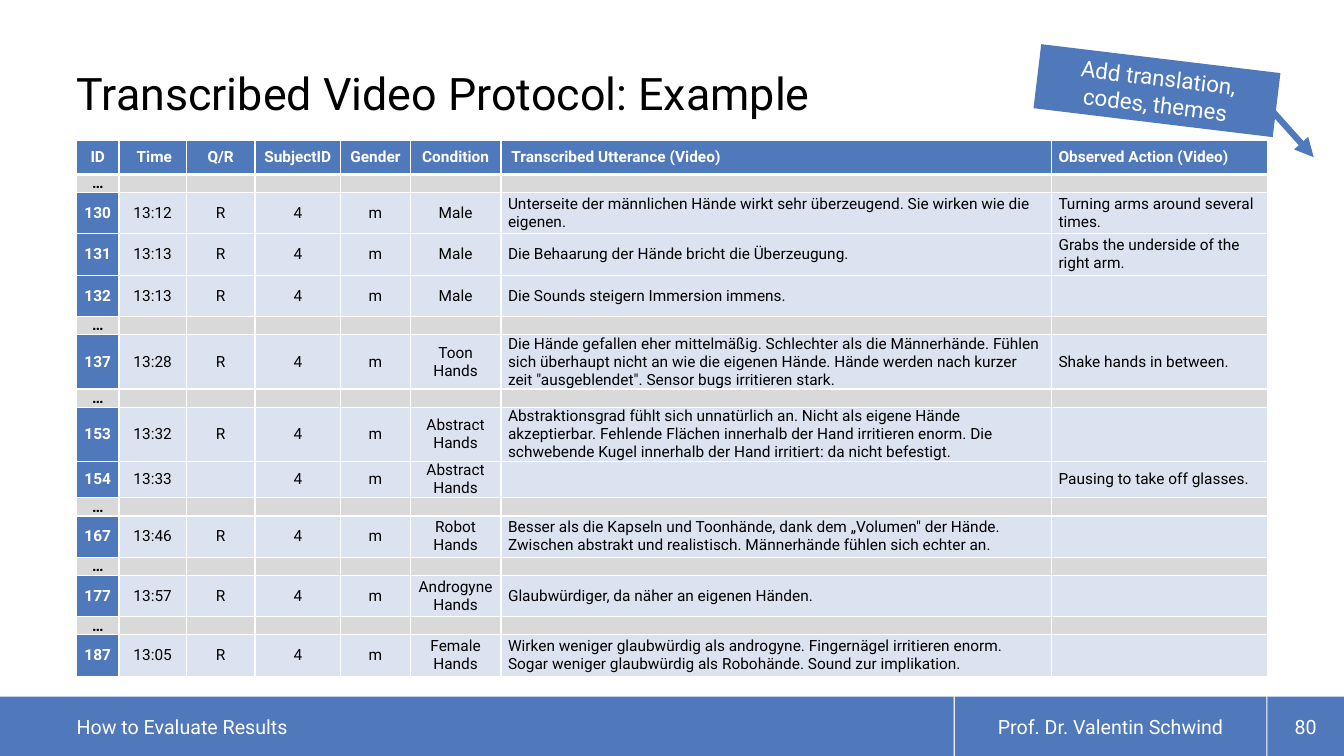
"""Builds the slide with an example of a transcribed video protocol."""
import lxml.etree
import pptx
import pptx.dml.color
import pptx.enum.shapes
import pptx.enum.text
import pptx.oxml.ns
import pptx.util

EMU_PER_PX = 9144
FONT = "Roboto"
COLORS = {"blue": "5079BC", "pale": "DBE3F1", "gray": "D9D9D9", "white": "FFFFFF", "black": "000000"}
ALIGN = pptx.enum.text.PP_ALIGN
MIDDLE = pptx.enum.text.MSO_ANCHOR.MIDDLE
BOTTOM = pptx.enum.text.MSO_ANCHOR.BOTTOM
RECTANGLE = pptx.enum.shapes.MSO_SHAPE.RECTANGLE

COLUMN_WIDTHS = [42, 67, 68, 85, 69, 90, 546, 214]
CENTERED_COLUMNS = 6
HEADER_HEIGHT = 34
GAP_HEIGHT = 18
HEADER = ["ID", " Time", "Q/R", "SubjectID", "Gender", "Condition",
          " Transcribed Utterance (Video)", "Observed Action (Video)"]
GAP = (GAP_HEIGHT, ["…"] + [""] * 7)


def entry(height, number, time, condition, utterance, action="", kind="R"):
    """Return the height and cell texts of one protocol entry."""
    return height, [number, time, kind, "4", "m", condition, utterance, action]


ROWS = [
    GAP,
    entry(41, "130", "13:12", "Male",
          "Unterseite der männlichen Hände wirkt sehr überzeugend. Sie wirken wie die eigenen.",
          "Turning arms around several times."),
    entry(41, "131", "13:13", "Male", "Die Behaarung der Hände bricht die Überzeugung.",
          "Grabs the underside of the right arm."),
    entry(41, "132", "13:13", "Male", "Die Sounds steigern Immersion immens."),
    GAP,
    entry(54, "137", "13:28", "Toon Hands",
          "Die Hände gefallen eher mittelmäßig. Schlechter als die Männerhände. Fühlen sich "
          "überhaupt nicht an wie die eigenen Hände. Hände werden nach kurzer zeit "
          '"ausgeblendet". Sensor bugs irritieren stark.',
          "Shake hands in between."),
    GAP,
    entry(54, "153", "13:32", "Abstract Hands",
          "Abstraktionsgrad fühlt sich unnatürlich an. Nicht als eigene Hände akzeptierbar. "
          "Fehlende Flächen innerhalb der Hand irritieren enorm. Die schwebende Kugel "
          "innerhalb der Hand irritiert: da nicht befestigt."),
    entry(36, "154", "13:33", "Abstract Hands", "", "Pausing to take off glasses.", kind=""),
    GAP,
    entry(41, "167", "13:46", "Robot Hands",
          'Besser als die Kapseln und Toonhände, dank dem „Volumen" der Hände. '
          "Zwischen abstrakt und realistisch. Männerhände fühlen sich echter an."),
    GAP,
    entry(41, "177", "13:57", "Androgyne Hands", "Glaubwürdiger, da näher an eigenen Händen."),
    GAP,
    entry(41, "187", "13:05", "Female Hands",
          "Wirken weniger glaubwürdig als androgyne. Fingernägel irritieren enorm. "
          "Sogar weniger glaubwürdig als Robohände. Sound zur implikation."),
]


def px(*lengths):
    """Turn px lengths into a list of EMU."""
    return [pptx.util.Emu(length * EMU_PER_PX) for length in lengths]


def rgb(name):
    """Return the named colour."""
    return pptx.dml.color.RGBColor.from_string(COLORS[name])


def paint(fill, color):
    """Give a fill one solid colour."""
    fill.solid()
    fill.fore_color.rgb = rgb(color)


def style(paragraph, size, color, align=ALIGN.LEFT, bold=False):
    """Set alignment and font of a paragraph."""
    paragraph.alignment = align
    font = paragraph.font
    font.name, font.size, font.bold = FONT, pptx.util.Pt(size), bold
    font.color.rgb = rgb(color)


def set_insets(frame, left, top, right, bottom):
    """Set the four margins of a text frame or cell."""
    frame.margin_left, frame.margin_top, frame.margin_right, frame.margin_bottom = px(
        left, top, right, bottom)


def add_box(slide, bounds, text="", size=14, rotation=0):
    """Add a blue rectangle with centred white text."""
    shape = slide.shapes.add_shape(RECTANGLE, *px(*bounds))
    shape.shadow.inherit = False
    shape.rotation = rotation
    paint(shape.fill, "blue")
    shape.line.fill.background()
    if text:
        frame = shape.text_frame
        frame.word_wrap = True
        frame.vertical_anchor = MIDDLE
        frame.text = text
        style(frame.paragraphs[0], size, "white", ALIGN.CENTER)


def fill_placeholder(slide, index, bounds, text, size, color, anchor):
    """Place a template placeholder on top and write one line into it."""
    shape = slide.placeholders[index]
    shape.left, shape.top, shape.width, shape.height = px(*bounds)
    slide.shapes._spTree.append(shape._element)
    frame = shape.text_frame
    frame.text = text
    frame.auto_size = pptx.enum.text.MSO_AUTO_SIZE.NONE
    frame.word_wrap = True
    frame.vertical_anchor = anchor
    set_insets(frame, 0, 0, 0, 0)
    paragraph = frame.paragraphs[0]
    paragraph.space_before = pptx.util.Pt(0)
    properties = paragraph._p.get_or_add_pPr()
    properties.set("marL", "0")
    properties.set("indent", "0")
    lxml.etree.SubElement(properties, pptx.oxml.ns.qn("a:buNone"))
    style(paragraph, size, color)
    return paragraph


def set_borders(cell, bottom_width):
    """Draw white borders around a cell."""
    properties = cell._tc.get_or_add_tcPr()
    for side, width in (("L", 1), ("R", 1), ("T", 1), ("B", bottom_width)):
        line = lxml.etree.SubElement(
            properties, pptx.oxml.ns.qn(f"a:ln{side}"), w=str(pptx.util.Pt(width)))
        fill = lxml.etree.SubElement(line, pptx.oxml.ns.qn("a:solidFill"))
        lxml.etree.SubElement(fill, pptx.oxml.ns.qn("a:srgbClr"), val=COLORS["white"])


def fill_cell(cell, text, fill, color, bold, align, bottom_width):
    """Write and format one table cell."""
    set_borders(cell, bottom_width)
    paint(cell.fill, fill)
    cell.vertical_anchor = MIDDLE
    set_insets(cell, 7, 0, 7, 0)
    cell.text = text
    paragraph = cell.text_frame.paragraphs[0]
    style(paragraph, 11, color, align, bold)
    if not text:
        lxml.etree.SubElement(paragraph._p, pptx.oxml.ns.qn("a:endParaRPr"), sz="1100")


def add_protocol(slide, left, top):
    """Add the table of transcribed utterances."""
    rows = [(HEADER_HEIGHT, HEADER)] + ROWS
    bounds = px(left, top, sum(COLUMN_WIDTHS), sum(height for height, _ in rows))
    table = slide.shapes.add_table(len(rows), len(HEADER), *bounds).table
    table.horz_banding = False
    for column, width in zip(table.columns, px(*COLUMN_WIDTHS)):
        column.width = width
    for row_index, (height, texts) in enumerate(rows):
        table.rows[row_index].height = px(height)[0]
        is_header, is_gap = texts is HEADER, texts is GAP[1]
        for column_index, text in enumerate(texts):
            is_label = is_header or column_index == 0
            fill = "gray" if is_gap else "blue" if is_label else "pale"
            color = "white" if fill == "blue" else "black"
            align = ALIGN.CENTER if column_index < CENTERED_COLUMNS else ALIGN.LEFT
            fill_cell(table.cell(row_index, column_index), text, fill, color, is_label,
                      align, 3 if is_header else 1)


def add_arrow(slide, start, end):
    """Add a thick blue arrow."""
    arrow = slide.shapes.add_connector(
        pptx.enum.shapes.MSO_CONNECTOR.STRAIGHT, *px(*start, *end))
    arrow.line.color.rgb = rgb("blue")
    arrow.line.width = pptx.util.Pt(4.5)
    lxml.etree.SubElement(arrow.line._get_or_add_ln(), pptx.oxml.ns.qn("a:tailEnd"), type="triangle")
    lxml.etree.SubElement(arrow._element.spPr, pptx.oxml.ns.qn("a:effectLst"))


def main():
    """Build and save the slide."""
    presentation = pptx.Presentation()
    presentation.slide_width, presentation.slide_height = px(1333, 750)
    slide = presentation.slides.add_slide(presentation.slide_layouts[1])
    add_box(slide, (947, 691, 309, 59), "Prof. Dr. Valentin Schwind")
    add_box(slide, (0, 691, 946, 59))
    add_box(slide, (1257, 691, 76, 59), "80")
    title = fill_placeholder(slide, 0, (76, 13, 1181, 106), "Transcribed Video Protocol: Example",
                             32, "black", BOTTOM)
    title.line_spacing = 0.9
    fill_placeholder(slide, 1, (76, 691, 870, 59), "How to Evaluate Results", 14, "white", MIDDLE)
    add_protocol(slide, 76, 139)
    add_box(slide, (1028, 58, 239, 64), "Add translation, codes, themes", 16, 6.9)
    add_arrow(slide, (1251, 98), (1303, 156))
    presentation.save("out.pptx")


if __name__ == "__main__":
    main()
